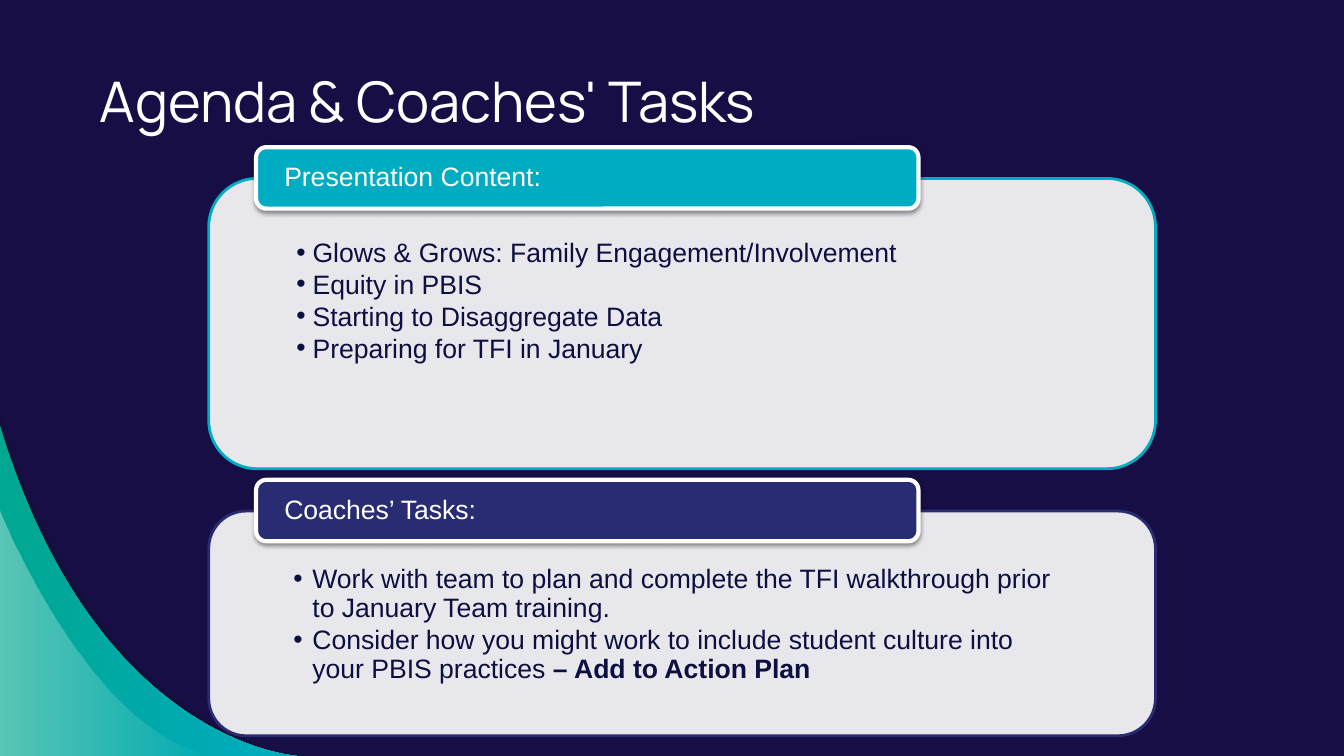
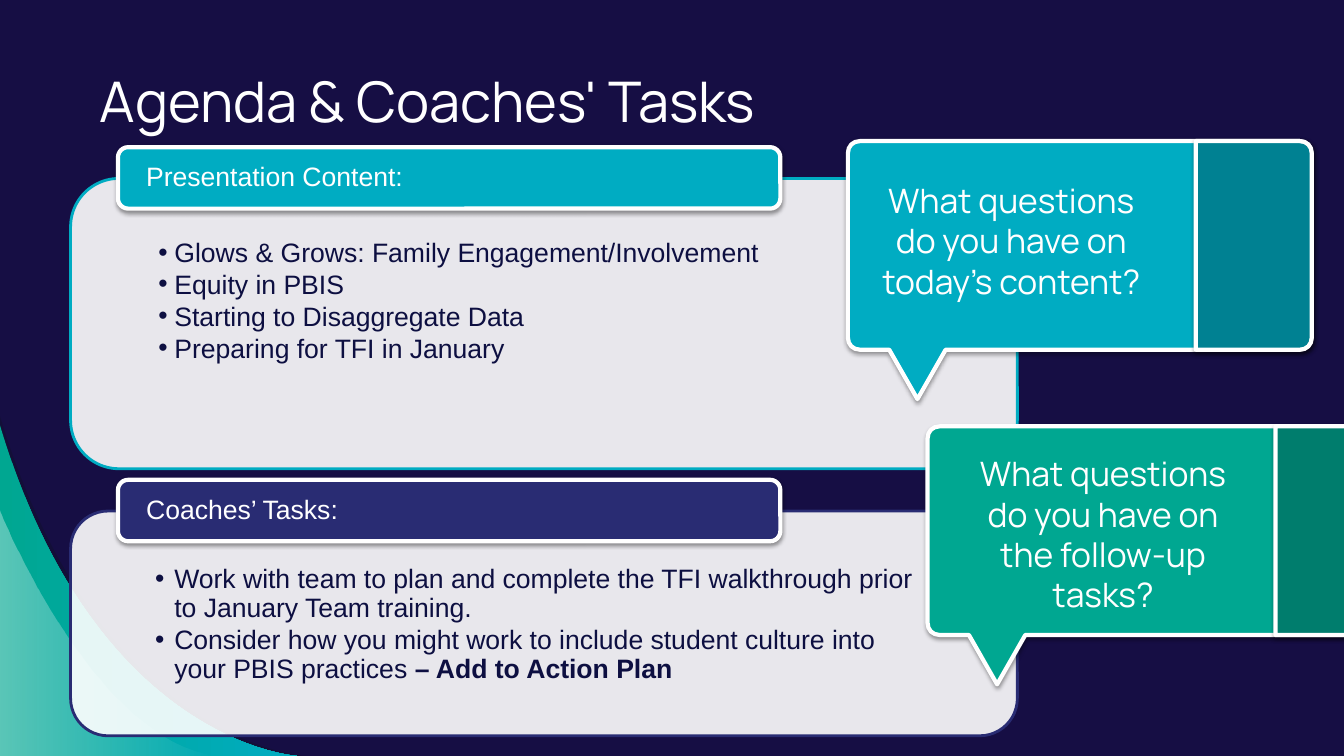
from lxml import etree
from pptx import Presentation
from pptx.dml.color import RGBColor
from pptx.enum.shapes import MSO_SHAPE
from pptx.enum.text import MSO_ANCHOR, MSO_AUTO_SIZE, PP_ALIGN
from pptx.oxml.ns import qn
from pptx.util import Pt

PX = 9144  # one hundredth of an inch
TITLE_ONLY = 5
ROUNDED = MSO_SHAPE.ROUNDED_RECTANGLE
TOP, MIDDLE, BOTTOM = MSO_ANCHOR.TOP, MSO_ANCHOR.MIDDLE, MSO_ANCHOR.BOTTOM
LEFT, CENTER = PP_ALIGN.LEFT, PP_ALIGN.CENTER
FIXED = MSO_AUTO_SIZE.NONE

NIGHT = RGBColor(0x16, 0x0E, 0x44)
CORNER_SHADE = RGBColor(0x12, 0x10, 0x2F)
INK = RGBColor(0x0D, 0x0F, 0x41)
WHITE = RGBColor(0xFF, 0xFF, 0xFF)
BLACK = RGBColor(0, 0, 0)
CYAN = RGBColor(0x00, 0xAC, 0xC2)
DARK_CYAN = RGBColor(0x00, 0x81, 0x92)
GREEN = RGBColor(0x00, 0xA7, 0x91)
DARK_GREEN = RGBColor(0x00, 0x7D, 0x6D)
INDIGO = RGBColor(0x29, 0x2C, 0x73)

TITLE_FONT = {"name": "Manrope", "size": Pt(40), "color": WHITE}
QUESTION_FONT = {"name": "Manrope", "size": Pt(24), "color": WHITE}
HEADER_FONT = {"name": "Arial", "size": Pt(19), "color": WHITE}
BODY_FONT = {"name": "Arial", "size": Pt(19), "color": INK}

# Each section: top, height, colour, heading, indent, paragraph format, bullets made of runs
SECTIONS = [
    (177, 288, CYAN, "Presentation Content:", 16, {}, [
        ["Glows & Grows: Family Engagement/Involvement"],
        ["Equity in PBIS"],
        ["Starting to Disaggregate Data"],
        ["Preparing for TFI in January"],
    ]),
    (507, 223, INDIGO, "Coaches’ Tasks:", 19,
     {"line_spacing": 0.9, "space_after": Pt(3)}, [
        ["Work with team to plan and complete the TFI walkthrough prior "
         "to January Team training."],
        ["Consider how you might work to include student culture into "
         "your PBIS practices ", "– Add to Action Plan"],
    ]),
]


def emu(*lengths):
    return [round(length * PX) for length in lengths]


def apply(target, values):
    for name, value in values.items():
        setattr(target, name, value)


def format_font(font, values):
    for name, value in values.items():
        if name == "color":
            font.color.rgb = value
        else:
            setattr(font, name, value)


def format_frame(frame, anchor, margins):
    sides = ("margin_left", "margin_top", "margin_right", "margin_bottom")
    apply(frame, {"word_wrap": True, "auto_size": FIXED, "vertical_anchor": anchor,
                  **dict(zip(sides, emu(*margins)))})


def set_opacity(shape, *percentages):
    """Give the fill colours of a shape their opacity, in order."""
    for color, percent in zip(shape.element.spPr.iter(qn("a:srgbClr")), percentages):
        etree.SubElement(color, qn("a:alpha"), val=str(percent * 1000))


def paint(shape, fill, line=None, width=0):
    shape.shadow.inherit = False
    shape.fill.solid()
    shape.fill.fore_color.rgb = fill
    if line is None:
        shape.line.fill.background()
    else:
        shape.line.color.rgb = line
        shape.line.width = Pt(width)


def paint_raised(shape, fill):
    """White outline and a soft shadow straight below."""
    paint(shape, fill, WHITE, 3)
    effects = shape.element.spPr.find(qn("a:effectLst"))
    shadow = etree.SubElement(effects, qn("a:outerShdw"), blurRad=str(Pt(3.1)),
                              dist=str(Pt(1.6)), dir="5400000", rotWithShape="0")
    color = etree.SubElement(shadow, qn("a:srgbClr"), val=str(BLACK))
    etree.SubElement(color, qn("a:alpha"), val="38000")


def paint_gradient(shape, colors):
    paint(shape, colors[0])
    shape.fill.gradient()
    shape.fill.gradient_angle = 0
    for stop, color in zip(shape.fill.gradient_stops, colors):
        stop.color.rgb = color


def add_outline(slide, start, segments, left=0, top=0):
    """Draw a closed outline; a segment of one point is a line, of three a curve."""
    builder = slide.shapes.build_freeform(*emu(left + start[0], top + start[1]))
    builder.add_line_segments(
        [emu(left + x, top + y) for segment in segments for x, y in segment], close=True)
    shape = builder.convert_to_shape()
    lines = iter(list(shape.element.iter(qn("a:lnTo"))))
    for segment in segments:
        parts = [next(lines) for _ in segment]
        if len(parts) == 3:
            curve = etree.Element(qn("a:cubicBezTo"))
            parts[0].addprevious(curve)
            for part in parts:
                curve.append(part[0])
                part.getparent().remove(part)
    return shape


def add_corner(slide, master):
    """Draw the curved corner and hand it to the master, so every slide shows it."""
    curves = [
        ((0, 413), [(98, 739), (303, 750), (303, 750)]),
        ((0, 422), [(95, 739), (295, 750), (295, 750)]),
        ((0, 506), [(0, 506), (91, 735), (216, 750)]),
    ]
    shade, sweep, sheen = [add_outline(slide, start, [curve, [(0, 750)]])
                           for start, curve in curves]
    paint(shade, CORNER_SHADE)
    set_opacity(shade, 54)
    paint_gradient(sweep, (GREEN, CYAN))
    paint_gradient(sheen, (WHITE, WHITE))
    set_opacity(sheen, 36, 0)
    for shape in (shade, sweep, sheen):
        master.shapes.element.append(shape.element)


def add_title(slide, text):
    title = slide.shapes.title
    apply(title, dict(zip(("left", "top", "width", "height"), emu(89, 51, 1026, 92))))
    format_frame(title.text_frame, BOTTOM, (10, 10, 10, 10))
    title.text_frame.text = text
    paragraph = title.text_frame.paragraphs[0]
    paragraph.alignment = LEFT
    format_font(paragraph.font, TITLE_FONT)


def add_bullet(paragraph, indent):
    properties = paragraph._p.get_or_add_pPr()
    properties.set("marL", str(indent * PX))
    properties.set("indent", str(-indent * PX))
    etree.SubElement(properties, qn("a:buFont"), typeface="Arial")
    etree.SubElement(properties, qn("a:buChar"), char="•")


def add_section(slide, left, top, height, color, heading, indent, spacing, bullets):
    panel = slide.shapes.add_shape(ROUNDED, *emu(left, top, 939, height))
    paint(panel, WHITE)
    set_opacity(panel, 90)
    panel.line.color.rgb = color
    panel.line.width = Pt(2)
    frame = panel.text_frame
    format_frame(frame, TOP, (73, 43, 73, 15))
    for index, runs in enumerate(bullets):
        paragraph = frame.add_paragraph() if index else frame.paragraphs[0]
        add_bullet(paragraph, indent)
        apply(paragraph, {"alignment": LEFT, **spacing})
        for position, text in enumerate(runs):
            run = paragraph.add_run()
            run.text = text
            format_font(run.font, {**BODY_FONT, "bold": position > 0})

    header = slide.shapes.add_shape(ROUNDED, *emu(left + 47, top - 31, 657, 61))
    paint_raised(header, color)
    format_frame(header.text_frame, MIDDLE, (25, 0, 25, 0))
    paragraph = header.text_frame.paragraphs[0]
    paragraph.text = heading
    apply(paragraph, {"alignment": LEFT, "line_spacing": 0.9})
    format_font(paragraph.font, HEADER_FONT)


def add_agenda(slide, left):
    add_title(slide, "Agenda & Coaches' Tasks")
    for section in SECTIONS:
        add_section(slide, left, *section)


def add_callout(slide, left, top, color, fold_color, text, text_offset):
    """Speech bubble with a darker strip on its right and a tail below."""
    width, height, radius, handle, fold = 460, 207, 12, 5, 345
    right, bottom = width - radius, height - radius
    far_right, far_bottom = width - handle, height - handle
    start = (right, 0)
    right_side = [
        [(far_right, 0), (width, handle), (width, radius)],
        [(width, bottom)],
        [(width, far_bottom), (far_right, height), (right, height)],
    ]
    tail = [[(97, height)], [(69, 256)], [(41, height)]]
    left_side = [
        [(radius, height)],
        [(handle, height), (0, far_bottom), (0, bottom)],
        [(0, radius)],
        [(0, handle), (handle, 0), (radius, 0)],
    ]
    strip_side = [[(fold, height)], [(fold, 0)]]
    bubble = add_outline(slide, start, right_side + tail + left_side, left, top)
    strip = add_outline(slide, start, right_side + strip_side, left, top)
    paint_raised(bubble, color)
    paint_raised(strip, fold_color)

    offset_x, offset_y = text_offset
    box = slide.shapes.add_textbox(*emu(left + offset_x, top + offset_y, 304, 131))
    format_frame(box.text_frame, MIDDLE, (10, 5, 10, 5))
    paragraph = box.text_frame.paragraphs[0]
    paragraph.text = text
    paragraph.alignment = CENTER
    format_font(paragraph.font, QUESTION_FONT)


def main():
    presentation = Presentation()
    presentation.slide_width, presentation.slide_height = emu(1333, 750)
    master = presentation.slide_master
    master.background.fill.solid()
    master.background.fill.fore_color.rgb = NIGHT
    layout = presentation.slide_layouts[TITLE_ONLY]

    agenda = presentation.slides.add_slide(layout)
    add_corner(agenda, master)
    add_agenda(agenda, 207)

    questions = presentation.slides.add_slide(layout)
    add_agenda(questions, 70)
    add_callout(questions, 841, 140, CYAN, DARK_CYAN,
                "What questions do you have on today’s content?", (10, 33))
    add_callout(questions, 920, 423, GREEN, DARK_GREEN,
                "What questions do you have on the follow-up tasks?", (22, 41))
    presentation.save("out.pptx")


if __name__ == "__main__":
    main()
